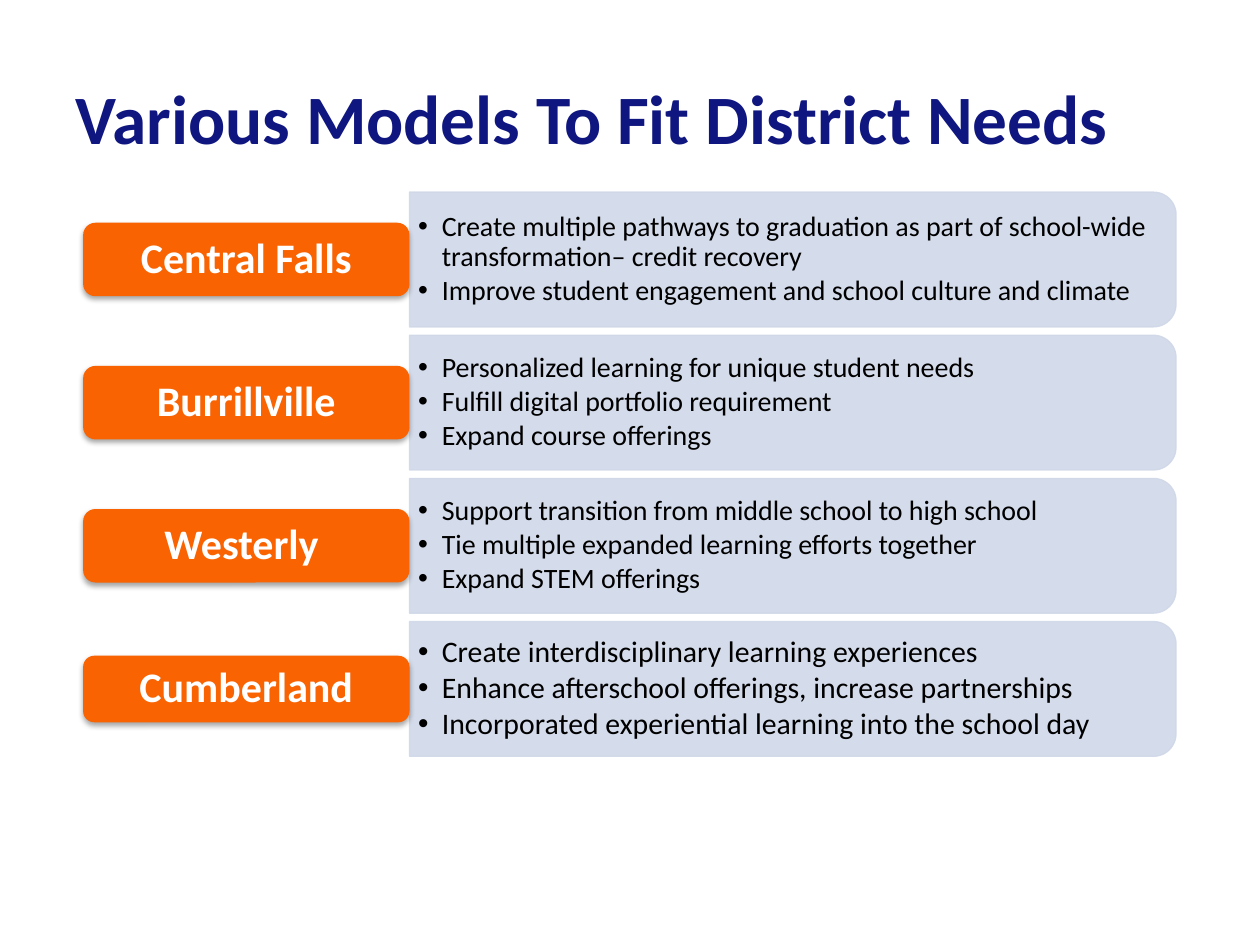
from lxml import etree
from pptx import Presentation
from pptx.dml.color import RGBColor
from pptx.enum.shapes import MSO_SHAPE
from pptx.enum.text import MSO_ANCHOR, PP_ALIGN
from pptx.oxml.ns import qn
from pptx.util import Pt

ROUNDED = MSO_SHAPE.ROUNDED_RECTANGLE
TWO_ROUNDED = MSO_SHAPE.ROUND_2_SAME_RECTANGLE
MIDDLE = MSO_ANCHOR.MIDDLE
LEFT, CENTER = PP_ALIGN.LEFT, PP_ALIGN.CENTER

FONT = "Calibri"
NAVY, ORANGE, PALE_BLUE = "10167F", "F96302", "D0D8E8"
BLACK, WHITE = "000000", "FFFFFF"

# Row geometry in points
FIRST_CENTER, ROW_PITCH = 148.3, 81.8
LABEL_LEFT, LABEL_WIDTH = 47.5, 186.5
PANEL_LEFT, PANEL_WIDTH, PANEL_HEIGHT = 234, 438, 77
TEXT_WIDTH, TEXT_HEIGHT = 434, 69

# District, label height, bullet size, bullets
DISTRICTS = [
    ("Central Falls", 42, 16, [
        "Create multiple pathways to graduation as part of school-wide "
        "transformation– credit recovery",
        "Improve student engagement and school culture and climate"]),
    ("Burrillville", 42, 16, [
        "Personalized learning for unique student needs",
        "Fulfill digital portfolio requirement",
        "Expand course offerings"]),
    ("Westerly ", 42, 16, [
        "Support transition from middle school to high school",
        "Tie multiple expanded learning efforts together",
        "Expand STEM offerings"]),
    ("Cumberland", 38, 17, [
        "Create interdisciplinary learning experiences",
        "Enhance afterschool offerings, increase partnerships",
        "Incorporated experiential learning into the school day"]),
]


def color(hex_value):
    return RGBColor.from_string(hex_value)


def set_values(target, values):
    for name, value in values.items():
        setattr(target, name, value)


def add_child(parent, tag, **attributes):
    child = etree.SubElement(parent, qn(tag))
    for name, value in attributes.items():
        child.set(name, str(value))
    return child


def write(paragraph, text, size, hex_value, bold=False):
    run = paragraph.add_run()
    run.text = text
    set_values(run.font, {"name": FONT, "size": Pt(size), "bold": bold})
    run.font.color.rgb = color(hex_value)


def format_frame(frame, horizontal, vertical):
    set_values(frame, {
        "word_wrap": True, "vertical_anchor": MIDDLE,
        "margin_left": Pt(horizontal), "margin_right": Pt(horizontal),
        "margin_top": Pt(vertical), "margin_bottom": Pt(vertical)})


def add_title(slide, text):
    title = slide.shapes.title
    set_values(title, {"left": Pt(36), "top": Pt(21.6),
                       "width": Pt(648), "height": Pt(90)})
    format_frame(title.text_frame, 7.2, 3.6)
    paragraph = title.text_frame.paragraphs[0]
    paragraph.alignment = LEFT
    write(paragraph, text, 39.6, NAVY, bold=True)


def add_panel(slide, center):
    # Drawn upright, then turned so the rounded corners face right
    left = PANEL_LEFT + (PANEL_WIDTH - PANEL_HEIGHT) / 2
    shape = slide.shapes.add_shape(
        TWO_ROUNDED, Pt(left), Pt(center - PANEL_WIDTH / 2),
        Pt(PANEL_HEIGHT), Pt(PANEL_WIDTH))
    shape.rotation = 90
    shape.shadow.inherit = False
    shape.fill.solid()
    shape.fill.fore_color.rgb = color(PALE_BLUE)
    shape.line.color.rgb = color(PALE_BLUE)
    shape.line.width = Pt(0.75)
    for rgb in shape._element.spPr.iter(qn("a:srgbClr")):
        add_child(rgb, "a:alpha", val=90000)


def add_bullets(slide, center, items, size):
    box = slide.shapes.add_textbox(
        Pt(PANEL_LEFT), Pt(center - TEXT_HEIGHT / 2),
        Pt(TEXT_WIDTH), Pt(TEXT_HEIGHT))
    frame = box.text_frame
    format_frame(frame, 5, 2.9)
    for index, item in enumerate(items):
        paragraph = frame.add_paragraph() if index else frame.paragraphs[0]
        properties = paragraph._p.get_or_add_pPr()
        properties.set("marL", str(Pt(13.5)))
        properties.set("indent", str(-Pt(13.5)))
        add_child(properties, "a:buFont", typeface="Arial")
        add_child(properties, "a:buChar", char="•")
        set_values(paragraph, {"level": 1, "alignment": LEFT,
                               "line_spacing": 0.9, "space_after": Pt(2.2)})
        write(paragraph, item, size, BLACK)


def add_label(slide, center, text, height):
    shape = slide.shapes.add_shape(
        ROUNDED, Pt(LABEL_LEFT), Pt(center - height / 2),
        Pt(LABEL_WIDTH), Pt(height))
    shape.fill.solid()
    shape.fill.fore_color.rgb = color(ORANGE)
    shape.line.fill.background()
    # Soft shadow straight below
    effects = add_child(shape._element.spPr, "a:effectLst")
    shadow = add_child(effects, "a:outerShdw", blurRad=Pt(3.1), dist=Pt(1.8),
                       dir=5400000, rotWithShape=0)
    rgb = add_child(shadow, "a:srgbClr", val=BLACK)
    add_child(rgb, "a:alpha", val=35000)
    format_frame(shape.text_frame, 7.2, 3.6)
    paragraph = shape.text_frame.paragraphs[0]
    set_values(paragraph, {"alignment": CENTER, "line_spacing": 0.9})
    write(paragraph, text, 24, WHITE, bold=True)


def main():
    presentation = Presentation()
    presentation.slide_width, presentation.slide_height = Pt(720), Pt(540)
    slide = presentation.slides.add_slide(presentation.slide_layouts[5])

    add_title(slide, "Various Models To Fit District Needs")

    # One row per district
    for row, (name, label_height, size, items) in enumerate(DISTRICTS):
        center = FIRST_CENTER + row * ROW_PITCH
        add_panel(slide, center)
        add_bullets(slide, center, items, size)
        add_label(slide, center, name, label_height)

    presentation.save("out.pptx")


if __name__ == "__main__":
    main()
